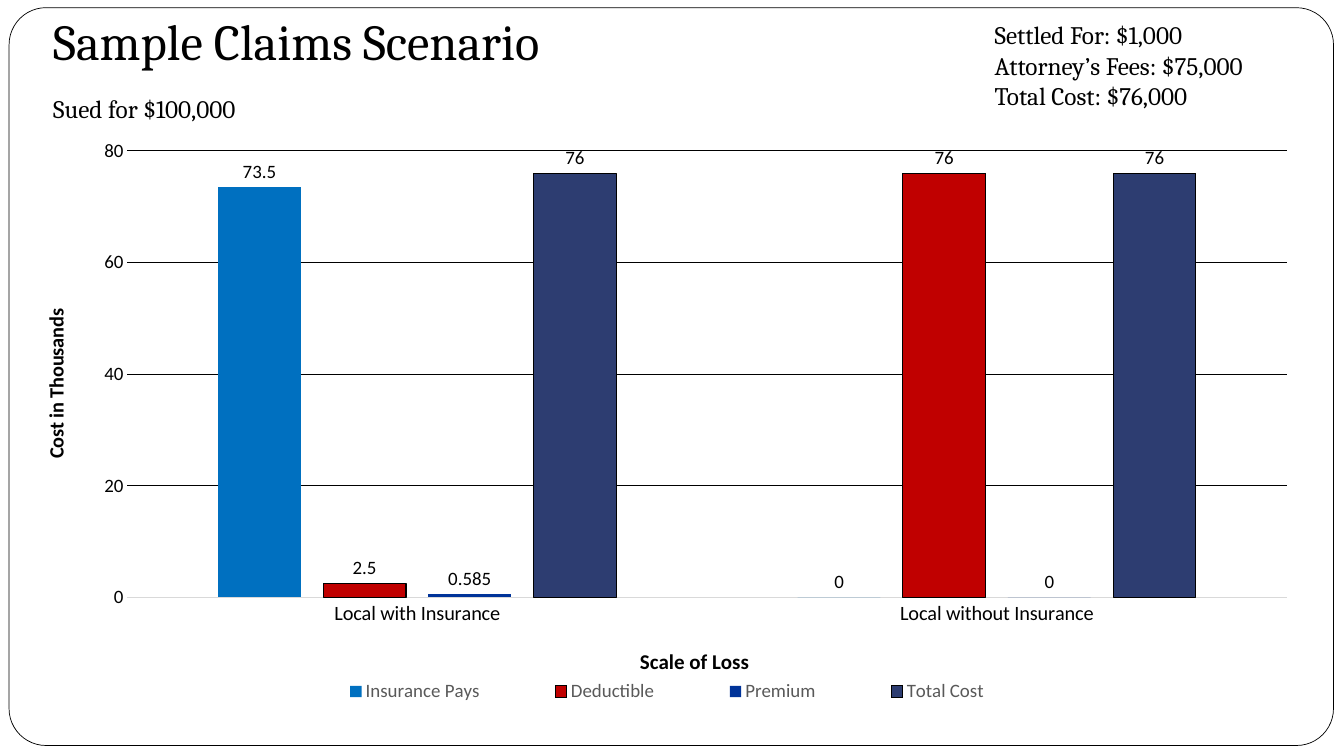
import pptx
import pptx.chart.data
import pptx.dml.color
import pptx.enum.chart
import pptx.enum.shapes
import pptx.enum.text
import pptx.oxml
import pptx.oxml.ns
import pptx.util
from dataclasses import dataclass

Pt = pptx.util.Pt
RGB = pptx.dml.color.RGBColor.from_string
qn = pptx.oxml.ns.qn
enum = pptx.enum.chart


@dataclass(frozen=True)
class Theme:
    head: str = "Cambria"
    body: str = "Calibri"
    ink: str = "000000"
    paper: str = "FFFFFF"
    gray: str = "595959"
    rule: str = "D9D9D9"
    pays: str = "0070C0"
    share: str = "C00000"
    fee: str = "003399"
    total: str = "2D3D71"
    title: float = 36
    text: float = 18
    base: float = 15
    side: float = 14.5
    small: float = 13.5


def style(font, size, name, color=Theme.ink, bold=False):
    for key, val in {"size": Pt(size), "name": name, "bold": bold}.items():
        setattr(font, key, val)
    font.color.rgb = RGB(color)


def place(node, prior, **spot):
    for old in node.findall(qn("c:layout")):
        node.remove(old)
    modes = {"x": "xMode", "y": "yMode"}
    tags = "".join(f'<c:{modes[k]} val="edge"/>' for k in spot if k in modes)
    tags += "".join(f'<c:{k} val="{v}"/>' for k, v in spot.items())
    inner = '<c:layoutTarget val="inner"/>' if prior is None else ""
    box = pptx.oxml.parse_xml(
        f"<c:layout {pptx.oxml.ns.nsdecls('c')}><c:manualLayout>{inner}{tags}"
        "</c:manualLayout></c:layout>")
    if prior is None:
        node.insert(0, box)
    else:
        node.find(qn(prior)).addnext(box)


theme = Theme()
deck = pptx.Presentation()
deck.slide_width, deck.slide_height = Pt(960), Pt(540)
slide = deck.slides.add_slide(deck.slide_layouts[5])
shapes = slide.shapes
title = shapes.title

frame = shapes.add_shape(pptx.enum.shapes.MSO_SHAPE.ROUNDED_RECTANGLE,
                         Pt(6.5), Pt(5.5), Pt(946), Pt(527))
frame.adjustments[0] = 0.05
frame.shadow.inherit = False
frame.fill.solid()
frame.fill.fore_color.rgb = RGB(theme.paper)
frame.line.color.rgb = RGB(theme.ink)
frame.line.width = Pt(0.5)
title.element.addprevious(frame.element)

for key, val in {"left": 31, "top": 26, "width": 816, "height": 73.5}.items():
    setattr(title, key, Pt(val))

data = pptx.chart.data.CategoryChartData()
data.categories = ["Local with Insurance", "Local without Insurance"]
bars = [
    ("Insurance Pays", (73.5, 0), theme.pays, False),
    ("Deductible", (2.5, 76), theme.share, True),
    ("Premium", (0.585, 0), theme.fee, False),
    ("Total Cost", (76, 76), theme.total, True),
]
for name, vals, color, edge in bars:
    data.add_series(name, vals)
chart = shapes.add_chart(enum.XL_CHART_TYPE.COLUMN_CLUSTERED,
                         Pt(16.5), Pt(91.5), Pt(920), Pt(430.5), data).chart
style(chart.font, theme.small, theme.body)
chart.has_title = False
chart.has_legend = True
chart.legend.position = enum.XL_LEGEND_POSITION.BOTTOM
chart.legend.include_in_layout = False
style(chart.legend.font, theme.small, theme.body, theme.gray)

plot = chart.plots[0]
for key, val in {"gap_width": 219, "overlap": -27,
                 "vary_by_categories": False}.items():
    setattr(plot, key, val)
for bar, (name, vals, color, edge) in zip(plot.series, bars):
    bar.format.fill.solid()
    bar.format.fill.fore_color.rgb = RGB(color)
    if edge:
        bar.format.line.color.rgb = RGB(theme.ink)
        bar.format.line.width = Pt(0.75)
    else:
        bar.format.line.fill.background()
    tags = bar.data_labels
    tags.show_value = True
    tags.position = enum.XL_LABEL_POSITION.OUTSIDE_END
    style(tags.font, theme.small, theme.body)

cost, loss = chart.value_axis, chart.category_axis
for axis, label, size, small, x, y in [
    (loss, "Scale of Loss", theme.base, theme.side, 0.476, 0.854),
    (cost, "Cost in Thousands", theme.side, theme.small, 0.012, 0.294),
]:
    axis.major_tick_mark = enum.XL_TICK_MARK.NONE
    axis.minor_tick_mark = enum.XL_TICK_MARK.NONE
    style(axis.tick_labels.font, small, theme.body)
    part = axis.axis_title.text_frame.paragraphs[0]
    run = part.add_run()
    run.text = label
    style(run.font, size, theme.body, bold=True)
    place(axis.axis_title.element, "c:tx", x=x, y=y)

for key, val in {"minimum_scale": 0, "maximum_scale": 80, "major_unit": 20,
                 "has_major_gridlines": True}.items():
    setattr(cost, key, val)
cost.format.line.fill.background()
for line, color in [(cost.major_gridlines.format.line, theme.ink),
                    (loss.format.line, theme.rule)]:
    line.color.rgb = RGB(color)
    line.width = Pt(0.75)

root = chart.element.find(qn("c:chart"))
place(root.find(qn("c:plotArea")), None, x=0.081, y=0.038, w=0.9, h=0.741)
place(root.find(qn("c:legend")), "c:legendPos", x=0.2, y=0.91, w=0.6, h=0.05)

note = shapes.add_shape(pptx.enum.shapes.MSO_SHAPE.RECTANGLE,
                        Pt(695.5), Pt(10), Pt(207.5), Pt(73))
note.shadow.inherit = False
note.fill.background()
note.line.color.rgb = RGB(theme.paper)
note.line.width = Pt(0.75)

anchor = pptx.enum.text.MSO_ANCHOR
for box, hold, left, base, lines in [
    (title, anchor.BOTTOM, 7, 11,
     [("Sample Claims Scenario", theme.title, 0),
      ("Sued for $100,000", theme.text, 16.5)]),
    (note, anchor.MIDDLE, 15, 3.5,
     [("Settled For: $1,000", theme.text, 0),
      ("Attorney’s Fees: $75,000", theme.text, 0),
      ("Total Cost: $76,000", theme.text, 0)]),
]:
    body = box.text_frame
    for key, val in {"vertical_anchor": hold, "word_wrap": True,
                     "auto_size": pptx.enum.text.MSO_AUTO_SIZE.NONE,
                     "margin_left": Pt(left), "margin_right": Pt(0),
                     "margin_top": Pt(3.5), "margin_bottom": Pt(base)}.items():
        setattr(body, key, val)
    body.text = "\n".join(words for words, size, gap in lines)
    for part, (words, size, gap) in zip(body.paragraphs, lines):
        part.alignment = pptx.enum.text.PP_ALIGN.LEFT
        part.space_before = Pt(gap)
        style(part.runs[0].font, size, theme.head)

deck.save("out.pptx")
